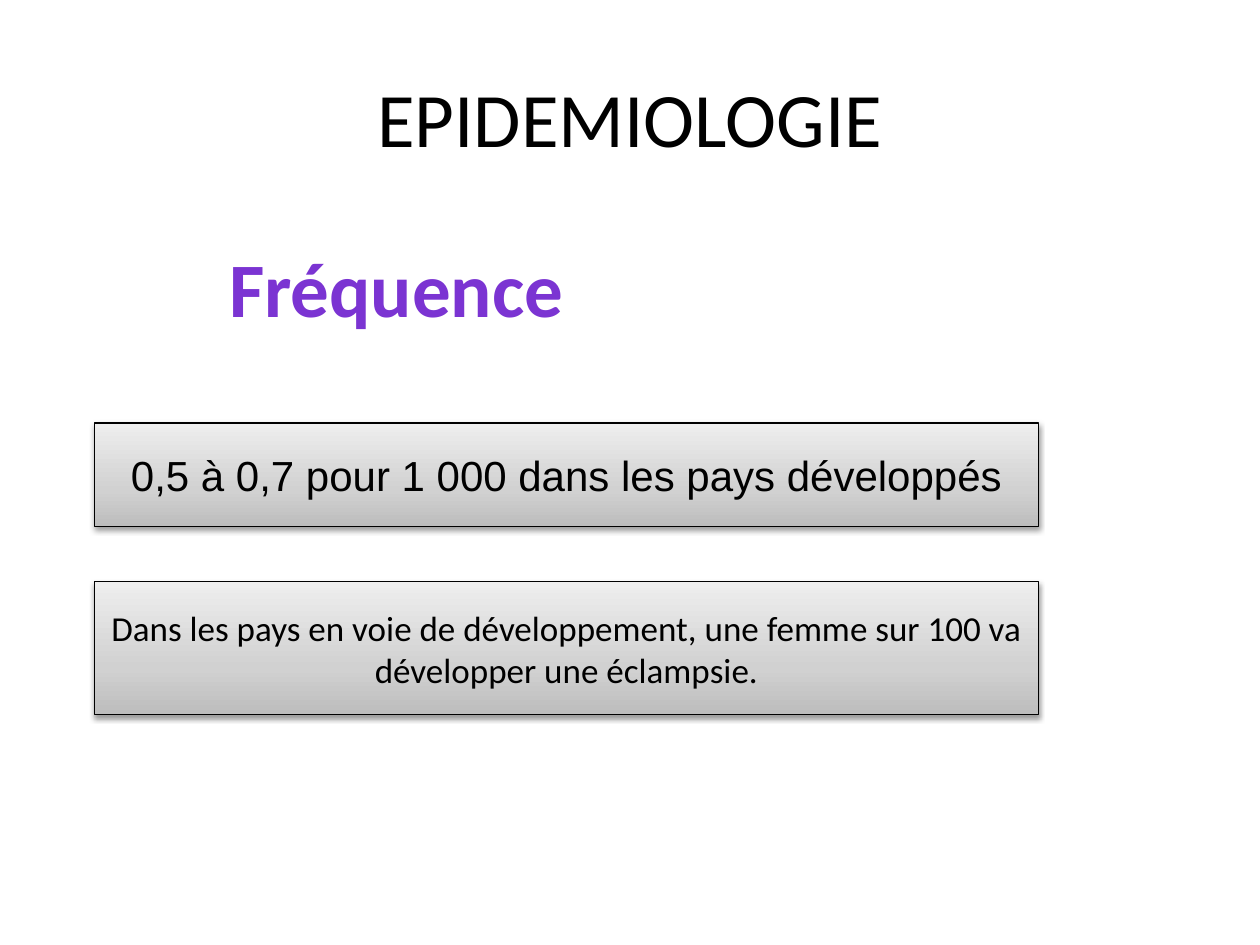
from copy import deepcopy
from dataclasses import dataclass

from lxml.etree import SubElement
from pptx import Presentation
from pptx.dml.color import RGBColor
from pptx.enum.shapes import MSO_SHAPE
from pptx.enum.text import MSO_ANCHOR, PP_ALIGN
from pptx.oxml.ns import qn
from pptx.util import Cm, Pt


@dataclass(frozen=True)
class Theme:
    """Colours, fonts and type sizes of the slide."""
    black: RGBColor = RGBColor(0x00, 0x00, 0x00)
    purple: RGBColor = RGBColor(0x7B, 0x34, 0xD2)
    panel: tuple = ((0, "BDBDBD"), (0.35, "D1D1D1"), (1, "EEEEEE"))
    sans: str = "Calibri"
    alt: str = "Arial"
    heading: int = 44
    fact: int = 24
    detail: int = 20


THEME = Theme()


def set_text(sp, text, size, font=THEME.sans, color=THEME.black, bold=False):
    """Write one centred paragraph into a shape."""
    tf = sp.text_frame
    tf.word_wrap = True
    tf.vertical_anchor = MSO_ANCHOR.MIDDLE
    p = tf.paragraphs[0]
    p.text = text
    p.alignment = PP_ALIGN.CENTER
    p.font.name, p.font.size, p.font.bold = font, Pt(size), bold
    p.font.color.rgb = color


def fill_gradient(sp, stops):
    """Fill a shape with a gradient that rises from bottom to top."""
    sp.fill.gradient()
    sp.fill.gradient_angle = 90
    gs_list = sp._element.spPr.find(qn("a:gradFill")).find(qn("a:gsLst"))
    while len(gs_list) < len(stops):
        gs_list.append(deepcopy(gs_list[-1]))
    for stop, (position, color) in zip(sp.fill.gradient_stops, stops):
        stop.position = position
        stop.color.rgb = RGBColor.from_string(color)


def add_shadow(sp):
    """Give a shape a soft shadow below it."""
    sp.shadow.inherit = False
    effects = sp._element.spPr.find(qn("a:effectLst"))
    shadow = SubElement(effects, qn("a:outerShdw"), blurRad=str(Pt(3.1)),
                        dist=str(Pt(1.6)), dir="5400000", rotWithShape="0")
    color = SubElement(shadow, qn("a:srgbClr"), val="000000")
    SubElement(color, qn("a:alpha"), val="38000")


def place_title(s, left, top, width, height):
    """Place the slide title in its box."""
    sp = s.shapes.title
    sp.left, sp.top, sp.width, sp.height = left, top, width, height
    set_text(sp, "EPIDEMIOLOGIE", THEME.heading)


def add_subtitle(s, left, top, width, height):
    """Add the purple section heading."""
    sp = s.shapes.add_textbox(left, top, width, height)
    set_text(sp, "Fréquence", THEME.heading, color=THEME.purple, bold=True)


def add_panel(s, left, top, width, height, text, size, font):
    """Add a grey panel with one statement."""
    sp = s.shapes.add_shape(MSO_SHAPE.RECTANGLE, left, top, width, height)
    fill_gradient(sp, THEME.panel)
    sp.line.color.rgb = THEME.black
    sp.line.width = Pt(0.75)
    add_shadow(sp)
    set_text(sp, text, size, font)
    sp.text_frame.paragraphs[0].space_before = Pt(size * 0.2)


def add_facts(s, left, top, width):
    """Stack the frequency statements with an equal gap."""
    facts = (
        (Cm(2.08), "0,5 à 0,7 pour 1 000 dans les pays développés",
         THEME.fact, THEME.alt),
        (Cm(2.67), "Dans les pays en voie de développement, une femme sur 100 "
         "va développer une éclampsie.", THEME.detail, THEME.sans),
    )
    for height, text, size, font in facts:
        add_panel(s, left, top, width, height, text, size, font)
        top += height + Cm(1.12)


def main():
    """Build and save the slide."""
    prs = Presentation()
    prs.slide_width, prs.slide_height = Cm(25.4), Cm(19.05)
    s = prs.slides.add_slide(prs.slide_layouts[5])
    place_title(s, Cm(1.27), Cm(0.76), Cm(22.86), Cm(3.18))
    add_facts(s, Cm(1.91), Cm(8.53), Cm(19.02))
    add_subtitle(s, Cm(3.78), Cm(4.72), Cm(8.43), Cm(2.13))
    prs.save("out.pptx")


if __name__ == "__main__":
    main()
